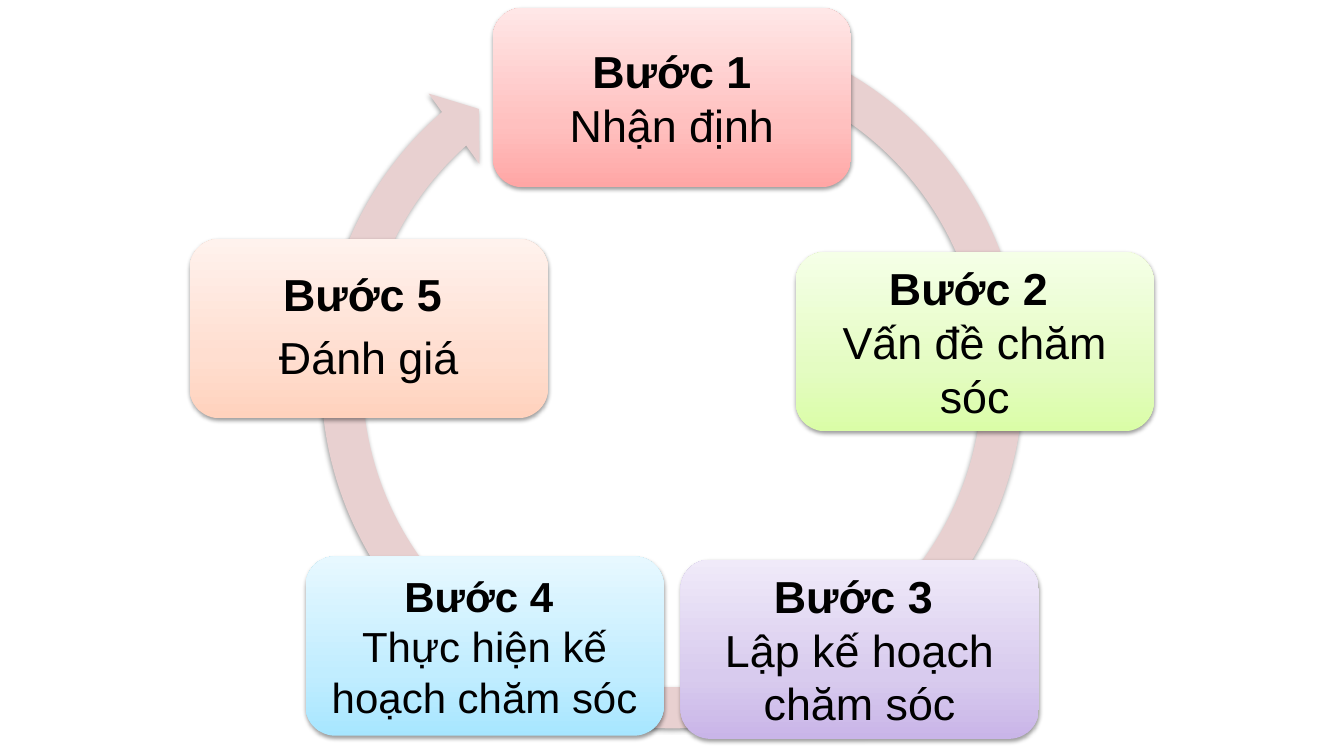
from copy import deepcopy
from dataclasses import dataclass

from lxml import etree
from pptx import Presentation
from pptx import util as u
from pptx.dml.color import RGBColor
from pptx.enum import shapes, text
from pptx.oxml.ns import qn


@dataclass(frozen=True)
class Theme:
    font: str = "Arial"
    ink: str = "000000"
    ring: str = "E8D0D0"
    shadow: str = "000000"
    # Gradients run from the bottom of a box to its top
    red: tuple = ("FFA6A5", "FFC0BF", "FFE7E7")
    green: tuple = ("DAFDA7", "E4FCC2", "F5FFE7")
    purple: tuple = ("C9B5E8", "D8CBEE", "F0EAF9")
    blue: tuple = ("A7E6FF", "C1EDFF", "E7F8FF")
    orange: tuple = ("FFD2BD", "FFDED0", "FFF2ED")
    stops: tuple = (0, 0.35, 1)
    size: int = 32
    small: int = 30


theme = Theme()


def write(p, words, size=theme.size, bold=False, color=theme.ink):
    r = p.add_run()
    r.text = words
    r.font.name = theme.font
    r.font.size = u.Pt(size)
    r.font.bold = bold
    r.font.color.rgb = RGBColor.from_string(color)


def finish_edges(sp):
    """Remove the outline and add a soft shadow below the shape."""
    sp.line.fill.background()
    sp.shadow.inherit = False
    effects = sp.element.spPr.find(qn("a:effectLst"))
    shadow = etree.SubElement(effects, qn("a:outerShdw"), blurRad="40000",
                              dist="20000", dir="5400000", rotWithShape="0")
    color = etree.SubElement(shadow, qn("a:srgbClr"), val=theme.shadow)
    etree.SubElement(color, qn("a:alpha"), val="38000")


prs = Presentation()
prs.slide_width, prs.slide_height = u.Cm(33.87), u.Cm(19.05)
s = prs.slides.add_slide(prs.slide_layouts[6])

# Ring arrow behind the steps
ring = s.shapes.add_shape(shapes.MSO_SHAPE.CIRCULAR_ARROW,
                          u.Cm(7.52), u.Cm(0.08), u.Cm(18.85), u.Cm(18.85))
for i, value in enumerate((0.055, 3.307, 137.213, 174.193, 0.058)):
    ring.adjustments[i] = value
ring.fill.solid()
ring.fill.fore_color.rgb = RGBColor.from_string(theme.ring)
finish_edges(ring)

# Left, top, gradient, heading, body, paragraph and type options
steps = [
    (12.42, 0.2, theme.red, "Bước 1", "Nhận định", {}),
    (20.05, 6.35, theme.green, "Bước 2 ", "Vấn đề chăm sóc", {}),
    (17.15, 14.1, theme.purple, "Bước 3 ", "Lập kế hoạch chăm sóc",
     {"one_paragraph": True, "after": 11}),
    (7.7, 14.02, theme.blue, "Bước 4 ", "Thực hiện kế hoạch chăm sóc",
     {"size": theme.small, "margin": 0.32}),
    (4.78, 6.02, theme.orange, "Bước 5 ", "Đánh giá",
     {"after": 11, "spacing": 0.9}),
]

for left, top, colors, heading, body, options in steps:
    sp = s.shapes.add_shape(shapes.MSO_SHAPE.ROUNDED_RECTANGLE,
                            u.Cm(left), u.Cm(top), u.Cm(9.03), u.Cm(4.52))
    sp.fill.gradient()
    sp.fill.gradient_angle = 90
    stop_list = sp.element.spPr.find(".//" + qn("a:gsLst"))
    stop_list.insert(1, deepcopy(stop_list[0]))
    for stop, position, color in zip(sp.fill.gradient_stops, theme.stops, colors):
        stop.position = position
        stop.color.rgb = RGBColor.from_string(color)
    finish_edges(sp)

    tf = sp.text_frame
    tf.word_wrap = True
    tf.vertical_anchor = text.MSO_ANCHOR.MIDDLE
    margin = u.Cm(options.get("margin", 0.34))
    tf.margin_left = tf.margin_right = tf.margin_top = tf.margin_bottom = margin

    size = options.get("size", theme.size)
    p = tf.paragraphs[0]
    write(p, heading, size=size, bold=True)
    if options.get("one_paragraph"):
        p.add_line_break()
    else:
        p = tf.add_paragraph()
    write(p, body, size=size)
    for p in tf.paragraphs:
        p.alignment = text.PP_ALIGN.CENTER
        p.space_after = u.Pt(options.get("after", 0))
        p.line_spacing = options.get("spacing", 1.0)

prs.save("out.pptx")
